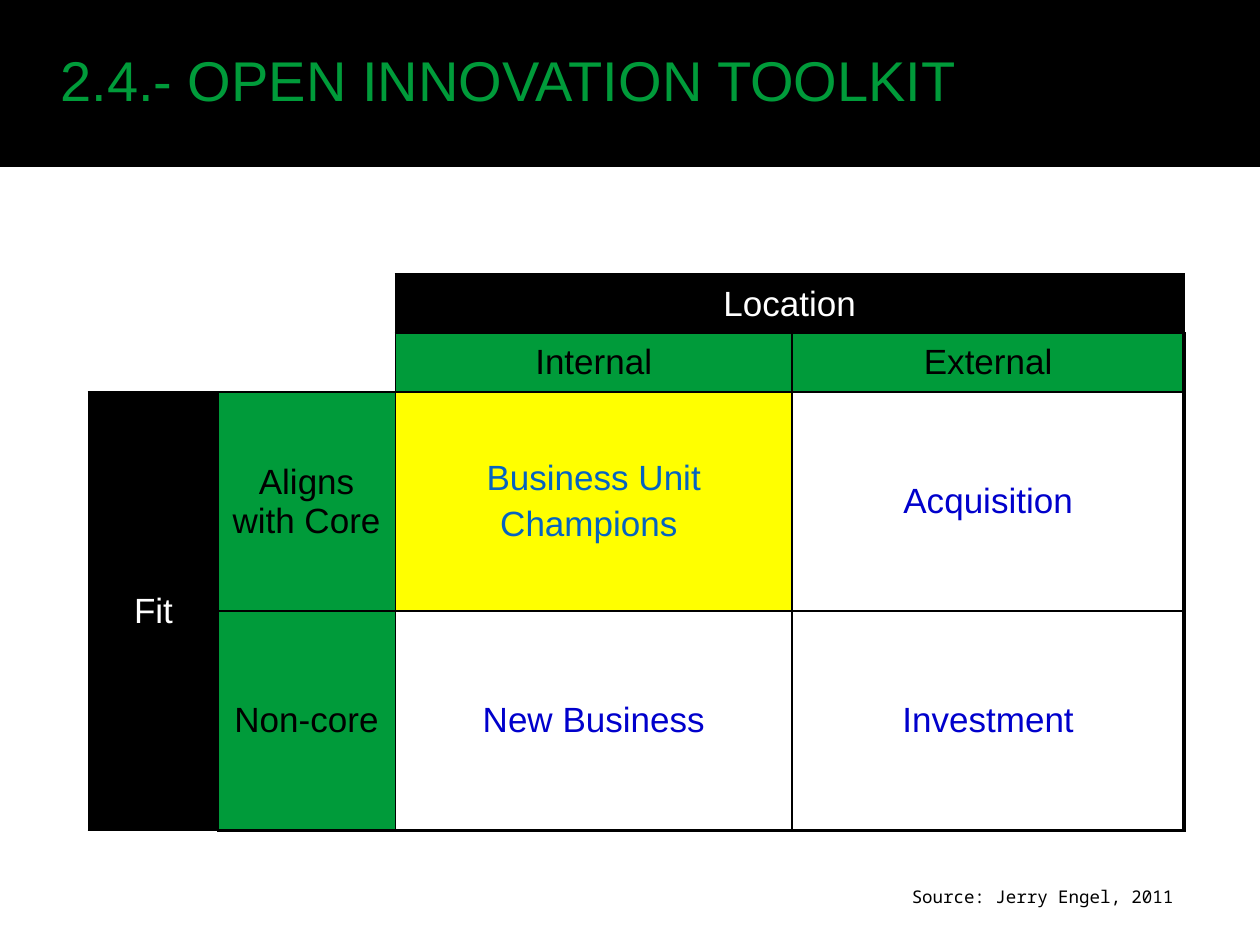
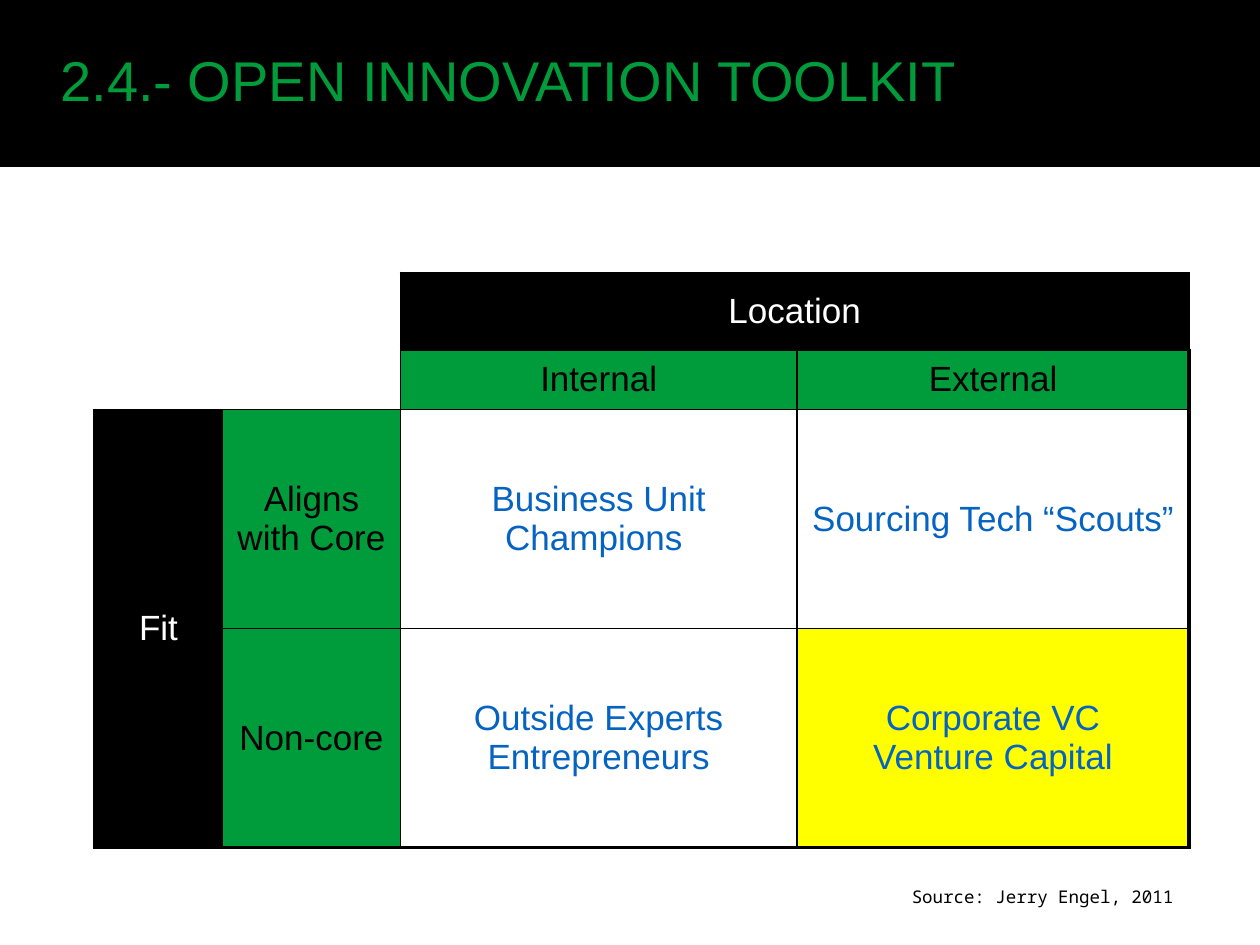
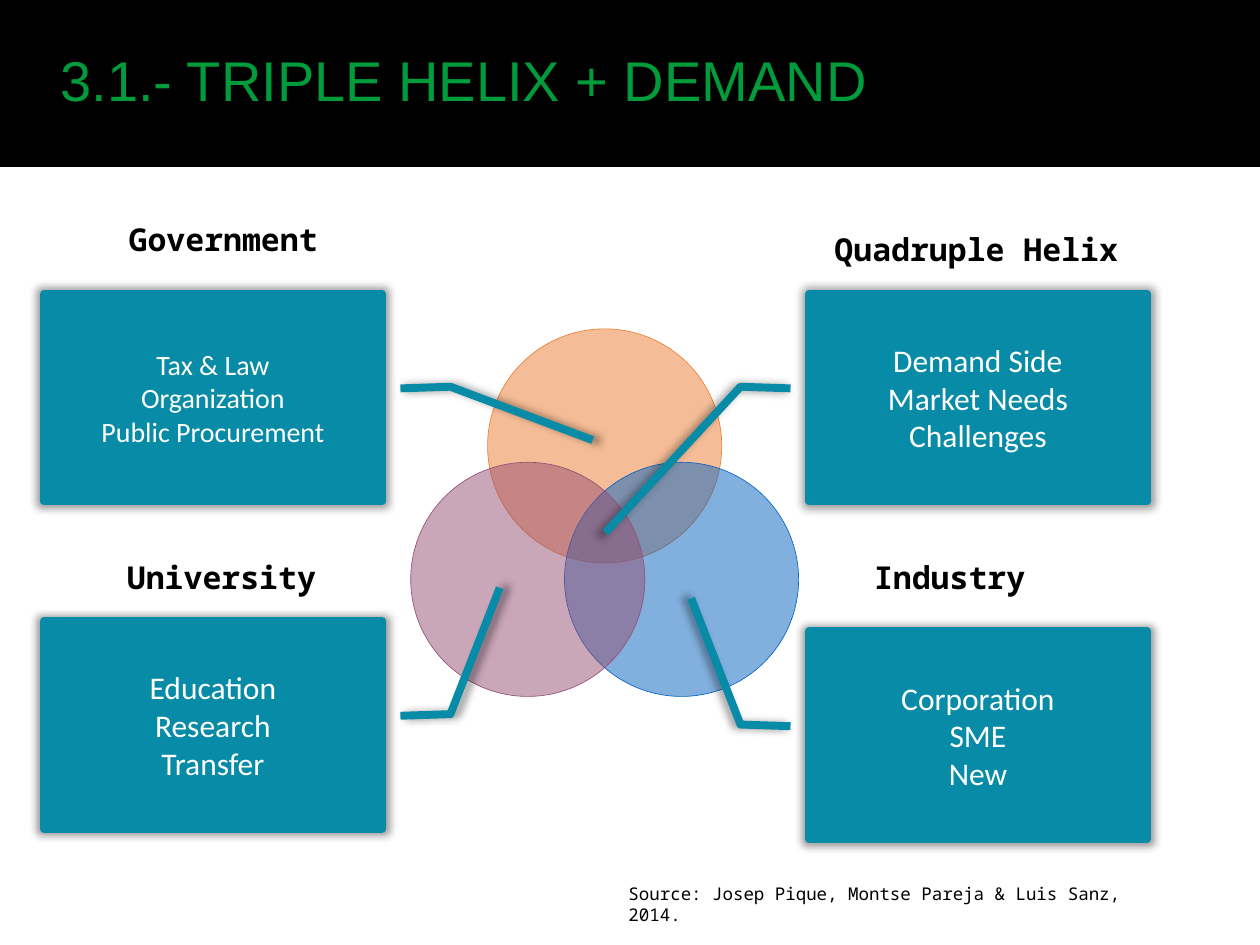
from dataclasses import dataclass

from lxml import etree
from pptx import Presentation
from pptx.dml.color import RGBColor
from pptx.enum.shapes import MSO_SHAPE
from pptx.enum.text import MSO_ANCHOR, MSO_AUTO_SIZE, PP_ALIGN
from pptx.oxml.ns import qn
from pptx.util import Cm, Pt

RECTANGLE = MSO_SHAPE.RECTANGLE
OVAL = MSO_SHAPE.OVAL
CALLOUT = MSO_SHAPE.LINE_CALLOUT_2
MIDDLE = MSO_ANCHOR.MIDDLE
FIT_SHAPE = MSO_AUTO_SIZE.SHAPE_TO_FIT_TEXT
LEFT, CENTER, RIGHT = PP_ALIGN.LEFT, PP_ALIGN.CENTER, PP_ALIGN.RIGHT


@dataclass(frozen=True)
class Theme:
    black: str = "000000"
    white: str = "FFFFFF"
    green: str = "009B3A"
    yellow: str = "FFFF00"
    blue: str = "0563C1"
    deep_blue: str = "0000CC"
    orange: str = "ED7D31"
    plum: str = "954F72"
    teal: str = "078BA6"
    sans: str = "Arial"
    body: str = "Calibri"
    mono: str = "Noto Sans Mono"
    title_size: float = 32
    table_size: float = 20
    heading_size: float = 18
    compact_size: float = 16
    source_size: float = 10
    thin: float = 1
    thick: float = 2.25
    hairline: float = 0.37
    callout_line: float = 4.5


THEME = Theme()
COLUMN_WIDTHS = (2.59, 3.58, 8.0, 7.9)
CALLOUT_WIDTH, CALLOUT_HEIGHT = 6.81, 4.19
CIRCLE_SIZE = 4.72


class Deck:
    def __init__(self, theme):
        self.theme = theme
        self.presentation = Presentation()
        self.presentation.slide_width = Cm(25.4)
        self.presentation.slide_height = Cm(19.05)
        self.slide = None

    def start_slide(self, title, title_width):
        theme = self.theme
        self.slide = self.presentation.slides.add_slide(self.presentation.slide_layouts[6])
        self.shape(RECTANGLE, 0, 0, 25.4, 3.35, theme.black, theme.thin)
        self.text(title, 0.97, 0.79, title_width, 1.63, theme.sans, theme.title_size,
                  theme.green, wrap=False)

    def format_text(self, frame, font, size, color, align, bold=False, gap=0):
        for index, paragraph in enumerate(frame.paragraphs):
            paragraph.alignment = align
            if index and gap:
                paragraph.space_before = Pt(gap)
            for run in paragraph.runs:
                run.font.name = font
                run.font.size = Pt(size)
                run.font.bold = bold
                run.font.color.rgb = RGBColor.from_string(color)

    def text(self, words, left, top, width, height, font, size, color,
             align=LEFT, bold=False, wrap=True):
        box = self.slide.shapes.add_textbox(Cm(left), Cm(top), Cm(width), Cm(height))
        frame = box.text_frame
        frame.text = words
        frame.word_wrap = wrap
        frame.auto_size = FIT_SHAPE
        self.format_text(frame, font, size, color, align, bold)

    def heading(self, words, left, top, width, height, align=LEFT):
        theme = self.theme
        self.text(words, left, top, width, height, theme.mono, theme.heading_size,
                  theme.black, align, bold=True)

    def source(self, words, left, top, width, align=LEFT):
        theme = self.theme
        self.text(words, left, top, width, 0.69, theme.mono, theme.source_size,
                  theme.black, align)

    def shape(self, kind, left, top, width, height, color, line_width):
        shape = self.slide.shapes.add_shape(kind, Cm(left), Cm(top), Cm(width), Cm(height))
        shape.shadow.inherit = False
        shape.fill.solid()
        shape.fill.fore_color.rgb = RGBColor.from_string(color)
        shape.line.color.rgb = RGBColor.from_string(color)
        shape.line.width = Pt(line_width)
        return shape

    def circle(self, left, top, color):
        shape = self.shape(OVAL, left, top, CIRCLE_SIZE, CIRCLE_SIZE, color,
                           self.theme.hairline)
        fill_color = shape._element.spPr.find(qn("a:solidFill"))[0]
        etree.SubElement(fill_color, qn("a:alpha"), val="50000")

    def callout(self, words, left, top, size, tip, flipped):
        theme = self.theme
        shape = self.shape(CALLOUT, left, top, CALLOUT_WIDTH, CALLOUT_HEIGHT, theme.teal,
                           theme.callout_line)
        for index, value in enumerate((0.456, -0.055, 0.448, -0.203, *tip)):
            shape.adjustments[index] = value
        properties = shape._element.spPr
        if flipped:
            properties.find(qn("a:xfrm")).set("flipH", "1")
        shadow = etree.SubElement(properties.find(qn("a:effectLst")), qn("a:outerShdw"),
                                  blurRad="63500", sx="102000", sy="102000",
                                  algn="ctr", rotWithShape="0")
        shadow_color = etree.SubElement(shadow, qn("a:srgbClr"), val=theme.black)
        etree.SubElement(shadow_color, qn("a:alpha"), val="40000")
        frame = shape.text_frame
        frame.text = words
        frame.word_wrap = True
        frame.vertical_anchor = MIDDLE
        self.format_text(frame, theme.body, size, theme.white, CENTER)

    def cell_borders(self, cell, widths):
        properties = cell._tc.get_or_add_tcPr()
        for side, width in zip("LRTB", widths):
            line = etree.SubElement(properties, qn(f"a:ln{side}"), w=str(Pt(width)))
            if width:
                fill = etree.SubElement(line, qn("a:solidFill"))
                etree.SubElement(fill, qn("a:srgbClr"), val=self.theme.black)
            else:
                etree.SubElement(line, qn("a:noFill"))

    def toolkit_table(self, left, top, header_height, options):
        theme = self.theme
        row_heights = (header_height, 1.19, 4.42, 4.42)
        rows, columns = len(row_heights), len(COLUMN_WIDTHS)
        table = self.slide.shapes.add_table(
            rows, columns, Cm(left), Cm(top),
            Cm(sum(COLUMN_WIDTHS)), Cm(sum(row_heights))).table
        table.first_row = table.horz_banding = False
        for column, width in zip(table.columns, COLUMN_WIDTHS):
            column.width = Cm(width)
        for row, height in zip(table.rows, row_heights):
            row.height = Cm(height)

        for row in range(rows):
            for column in range(columns):
                cell = table.cell(row, column)
                if row < 2 and column < 2:
                    widths = (0, theme.thin * (column == 1), 0, theme.thin * (row == 1))
                else:
                    on_edge = (column == 0, column == columns - 1, row == 0, row == rows - 1)
                    widths = [theme.thick if edge else theme.thin for edge in on_edge]
                self.cell_borders(cell, widths)
                cell.fill.background()
        for first, last in (((0, 0), (1, 1)), ((0, 2), (0, 3)), ((2, 0), (3, 0))):
            table.cell(*first).merge(table.cell(*last))

        axes = {(0, 2): "Location", (2, 0): "Fit"}
        labels = {(1, 2): "Internal", (1, 3): "External",
                  (2, 1): "Aligns with Core", (3, 1): "Non-core"}
        contents = {place: (words, theme.white, theme.black) for place, words in axes.items()}
        contents |= {place: (words, theme.black, theme.green)
                     for place, words in labels.items()}
        contents |= dict(zip(((2, 2), (2, 3), (3, 2), (3, 3)), options))
        for place, (words, color, fill, *gap) in contents.items():
            cell = table.cell(*place)
            cell.fill.solid()
            cell.fill.fore_color.rgb = RGBColor.from_string(fill)
            cell.vertical_anchor = MIDDLE
            cell.text_frame.text = words
            self.format_text(cell.text_frame, theme.sans, theme.table_size, color, CENTER,
                             gap=sum(gap))

    def toolkit_slide(self, title_width, left, top, header_height, options):
        self.start_slide("2.4.- OPEN INNOVATION TOOLKIT", title_width)
        self.toolkit_table(left, top, header_height, options)
        self.source("Source: Jerry Engel, 2011", 11.4, 17.73, 12.5, RIGHT)

    def helix_slide(self):
        theme = self.theme
        self.start_slide("3.1.- TRIPLE HELIX + DEMAND", 16.92)
        self.circle(9.83, 6.63, theme.orange)
        self.circle(11.38, 9.32, theme.blue)
        self.circle(8.28, 9.32, theme.plum)
        self.heading("University", 2.31, 11.13, 5, 1.3)
        self.heading("Government", 1.3, 4.32, 6.4, 1.27, CENTER)
        self.heading("Industry", 17.37, 11.13, 4.52, 1.3)
        lower_tip = (-0.16, -0.349)
        for words, left, top, size, tip, flipped in (
            ("Tax & Law\nOrganization\nPublic Procurement", 0.89, 5.92,
             theme.compact_size, (0.705, -0.624), True),
            ("Education\nResearch\nTransfer", 0.89, 12.52,
             theme.heading_size, lower_tip, True),
            ("Corporation\nSME\nNew", 16.31, 12.73,
             theme.heading_size, lower_tip, False),
            ("Demand Side\nMarket Needs\nChallenges", 16.31, 5.92,
             theme.heading_size, (1.15, -0.603), False),
        ):
            self.callout(words, left, top, size, tip, flipped)
        self.heading("Quadruple Helix", 16.48, 4.52, 6.4, 1.02, CENTER)
        self.source("Source: Josep Pique, Montse Pareja & Luis Sanz, 2014.", 12.42, 17.68, 10.87)


def main():
    deck = Deck(THEME)
    deck.toolkit_slide(19.41, 1.8, 5.54, 1.17, (
        ("Business Unit\nChampions ", THEME.blue, THEME.yellow, 4),
        ("Acquisition", THEME.deep_blue, THEME.white),
        ("New Business", THEME.deep_blue, THEME.white),
        ("Investment", THEME.deep_blue, THEME.white),
    ))
    deck.toolkit_slide(18.72, 1.9, 5.51, 1.55, (
        ("Business Unit Champions ", THEME.blue, THEME.white),
        ("Sourcing Tech “Scouts”", THEME.blue, THEME.white),
        ("Outside Experts\nEntrepreneurs", THEME.blue, THEME.white),
        ("Corporate VC\nVenture Capital", THEME.blue, THEME.yellow),
    ))
    deck.helix_slide()
    deck.presentation.save("out.pptx")


if __name__ == "__main__":
    main()
